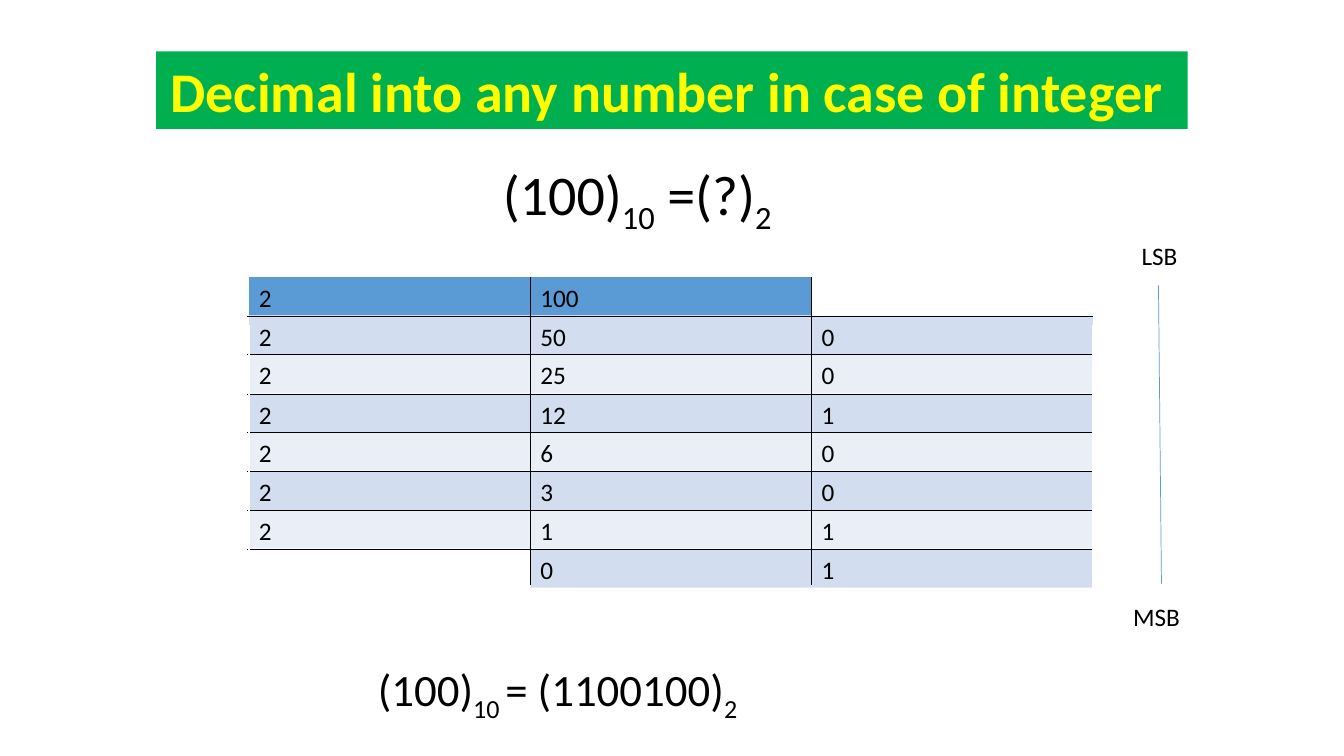
"""Build the slide that converts decimal 100 to binary by repeated division."""
from dataclasses import dataclass

from lxml import etree
from pptx import Presentation
from pptx import util as u
from pptx.dml.color import RGBColor
from pptx.enum import shapes, text
from pptx.oxml.ns import qn

PX = u.Inches(1) // 100


@dataclass(frozen=True)
class Theme:
    font: str = "Calibri"
    black: str = "000000"
    white: str = "FFFFFF"
    blue: str = "5B9BD5"
    band_dark: str = "D2DEEF"
    band_light: str = "EAEFF7"
    green: str = "00B050"
    yellow: str = "FFFF00"
    body: int = 18
    result: int = 32
    title: int = 40


@dataclass(frozen=True)
class Run:
    words: str
    subscript: bool = False


@dataclass(frozen=True)
class Block:
    left: int
    top: int
    width: int
    height: int
    runs: tuple[Run, ...]
    size: int
    fill: str | None = None
    color: str = "000000"
    bold: bool = False
    centred: bool = False
    grow: bool = True
    inset_left: int = 10
    inset_right: int = 10


@dataclass(frozen=True)
class Rule:
    x1: int
    y1: int
    x2: int
    y2: int
    color: str
    weight: float = 0.5


THEME = Theme()
NUMBER, BASE = 100, 2
GRID_LEFT, GRID_TOP = 247, 275
COL_WIDTH, ROW_HEIGHT = 279, 38
GRID_RIGHT = GRID_LEFT + 3 * COL_WIDTH


def column_x(col: int) -> int:
    """Return the left edge of a column."""
    return GRID_LEFT + col * COL_WIDTH


def row_y(row: int) -> int:
    """Return the top edge of a row."""
    return round(GRID_TOP + row * 270 / 7)


def division_rows(number: int, base: int) -> list[tuple[int | None, int, int | None]]:
    """List divisor, quotient and remainder for each division step."""
    rows = [(base, number, None)]
    while number:
        number, remainder = divmod(number, base)
        rows.append((base if number else None, number, remainder))
    return rows


def division_cells() -> list[Block]:
    """Lay out the filled cells of the division grid."""
    cells = []
    for row, values in enumerate(division_rows(NUMBER, BASE)):
        band = THEME.band_dark if row % 2 else THEME.band_light
        fill = band if row else THEME.blue
        for col, value in enumerate(values):
            if value is not None:
                cells.append(Block(column_x(col), row_y(row), COL_WIDTH, ROW_HEIGHT,
                                   (Run(str(value)),), THEME.body, fill, grow=False))
    return cells


def division_rules() -> list[Rule]:
    """Lay out the rules between columns and rows and at the outer sides."""
    inner = [Rule(column_x(c), GRID_TOP, column_x(c), 580, THEME.black) for c in (1, 2)]
    between = [Rule(GRID_LEFT - 2, row_y(r), GRID_RIGHT, row_y(r), THEME.black)
               for r in range(1, 8)]
    sides = [Rule(x, 322, x, 628, THEME.white, 0.88) for x in (GRID_LEFT, GRID_RIGHT)]
    return inner + between + sides


def draw_block(s, block: Block) -> None:
    """Draw a text box, or a filled rectangle with text."""
    box = [v * PX for v in (block.left, block.top, block.width, block.height)]
    if block.fill:
        sp = s.shapes.add_shape(shapes.MSO_SHAPE.RECTANGLE, *box)
        sp.shadow.inherit = False
        sp.fill.solid()
        sp.fill.fore_color.rgb = RGBColor.from_string(block.fill)
        sp.line.fill.background()
    else:
        sp = s.shapes.add_textbox(*box)
    tf = sp.text_frame
    tf.word_wrap = True
    tf.auto_size = (text.MSO_AUTO_SIZE.SHAPE_TO_FIT_TEXT if block.grow
                    else text.MSO_AUTO_SIZE.NONE)
    tf.vertical_anchor = text.MSO_ANCHOR.TOP
    tf.margin_left, tf.margin_right = block.inset_left * PX, block.inset_right * PX
    tf.margin_top = tf.margin_bottom = 5 * PX
    p = tf.paragraphs[0]
    p.alignment = text.PP_ALIGN.CENTER if block.centred else text.PP_ALIGN.LEFT
    for run in block.runs:
        r = p.add_run()
        r.text = run.words
        r.font.name = THEME.font
        r.font.size = u.Pt(block.size)
        r.font.bold = block.bold
        r.font.color.rgb = RGBColor.from_string(block.color)
        if run.subscript:
            r._r.get_or_add_rPr().set("baseline", "-25000")


def draw_rule(s, rule: Rule) -> None:
    """Draw a straight line without a shadow."""
    ends = [v * PX for v in (rule.x1, rule.y1, rule.x2, rule.y2)]
    line = s.shapes.add_connector(shapes.MSO_CONNECTOR.STRAIGHT, *ends)
    line.line.color.rgb = RGBColor.from_string(rule.color)
    line.line.width = u.Pt(rule.weight)
    etree.SubElement(line._element.spPr, qn("a:effectLst"))


def main() -> None:
    """Build and save the slide."""
    prs = Presentation()
    prs.slide_width, prs.slide_height = 1333 * PX, 750 * PX
    s = prs.slides.add_slide(prs.slide_layouts[6])
    question = (Run("(100)"), Run("10", True), Run(" =(?)"), Run("2", True))
    answer = (Run("(100)"), Run("10 ", True), Run("= (1100100)"), Run("2", True))
    labels = [
        Block(155, 51, 1023, 77, (Run("Decimal into any number in case of integer"),),
              THEME.title, THEME.green, THEME.yellow, bold=True, inset_left=14),
        Block(444, 153, 376, 77, question, THEME.title, centred=True),
        Block(108 + 1000, 233, 84, 41, (Run("LSB"),), THEME.body, centred=True),
        Block(1114, 592, 81, 40, (Run("MSB"),), THEME.body),
        Block(254, 652, 632, 64, answer, THEME.result, centred=True, inset_right=44),
    ]
    for cell in division_cells():
        draw_block(s, cell)
    for rule in division_rules():
        draw_rule(s, rule)
    for label in labels:
        draw_block(s, label)
    draw_rule(s, Rule(1149, 283, 1152, 579, THEME.blue))
    prs.save("out.pptx")


if __name__ == "__main__":
    main()
